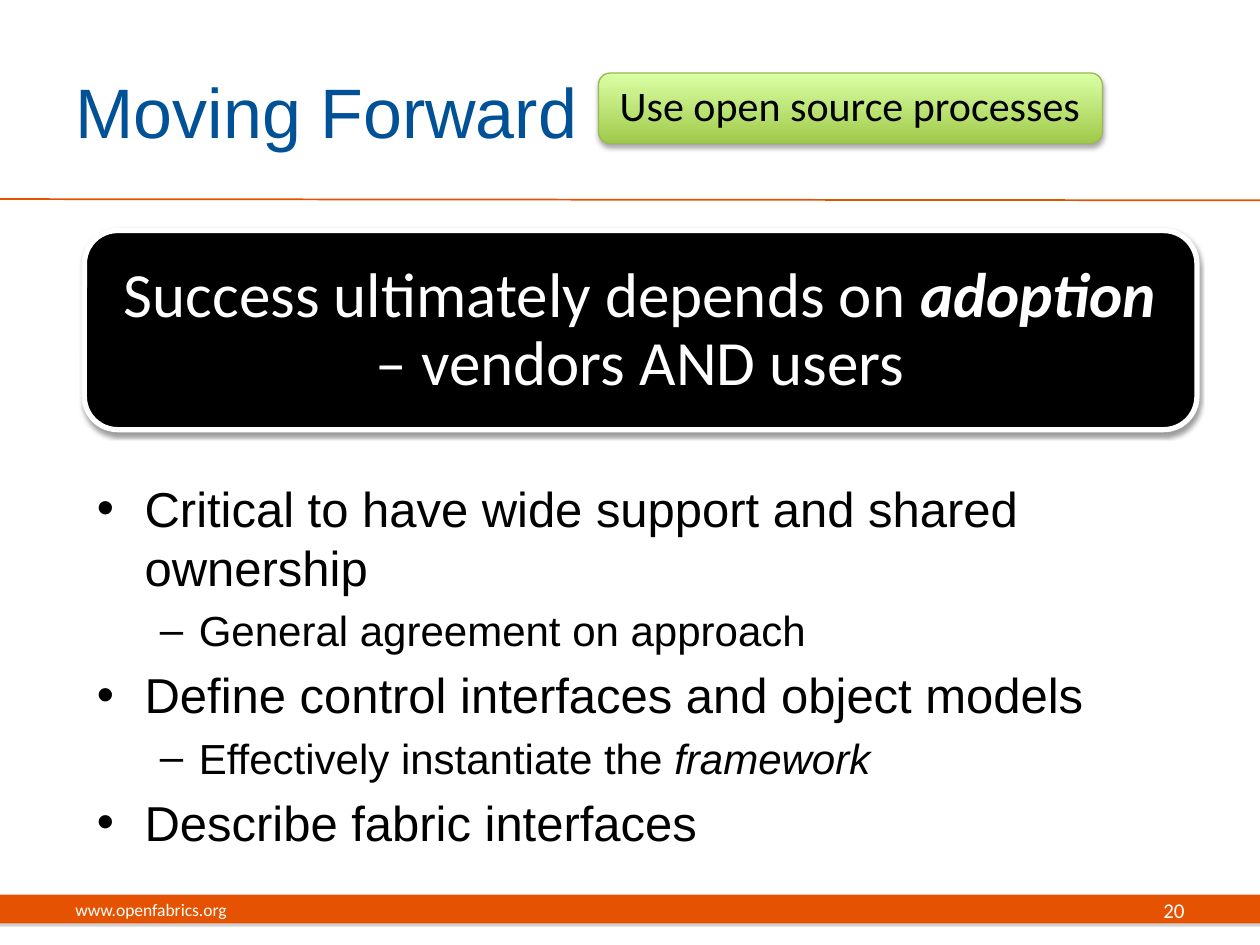
"""Build the Moving Forward slide."""
from lxml.etree import SubElement
from pptx import Presentation
from pptx.dml.color import RGBColor
from pptx.enum.shapes import MSO_CONNECTOR as Line, MSO_SHAPE as Shape
from pptx.enum.text import MSO_ANCHOR as Anchor, MSO_AUTO_SIZE as Fit, PP_ALIGN as Align
from pptx.oxml.ns import qn
from pptx.util import Inches, Pt

ORANGE, WHITE, BLACK = "E55302", "FFFFFF", "000000"
TITLE = [("Moving Forward", "")]
BULLETS = [
    (0, [("Critical to have wide support and shared ownership", "")]),
    (1, [("General agreement on approach", "")]),
    (0, [("Define control interfaces and object models", "")]),
    (1, [("Effectively instantiate the ", ""), ("framework", "i")]),
    (0, [("Describe fabric interfaces", "")]),
]
LEVELS = [("•", 0.38, -0.38, 28), ("–", 0.81, -0.31, 24)]
BANNER = [("Success ultimately depends on ", ""), ("adoption", "bi"),
          (" – vendors AND users", "")]
BADGE = [("Use open source processes", "")]
SITE = [("www.openfabrics.org", "")]
PAGE = [("20", "")]


def color(code):
    return RGBColor.from_string(code)


def write(para, runs, size=28, font="Arial", ink=BLACK, align=Align.LEFT,
          before=0, after=0, spacing=1.0):
    para.alignment, para.line_spacing = align, spacing
    para.space_before, para.space_after = Pt(before), Pt(after)
    for text, style in runs:
        run = para.add_run()
        run.text = text
        face = run.font
        face.name, face.size = font, Pt(size)
        face.bold, face.italic = "b" in style, "i" in style
        face.color.rgb = color(ink)


def frame(shape, anchor=Anchor.MIDDLE, inset=None):
    body = shape.text_frame
    body.word_wrap, body.auto_size = True, Fit.NONE
    body.vertical_anchor = anchor
    if inset is not None:
        body.margin_left = body.margin_right = Inches(inset)
        body.margin_top = body.margin_bottom = Inches(inset)
    return body


def label(slide, box, runs, inset=None, **style):
    shape = slide.shapes.add_textbox(*map(Inches, box))
    write(frame(shape, inset=inset).paragraphs[0], runs, **style)


def panel(slide, kind, box, fill, line=None, width=1, shadow=(BLACK, 35, 3.1, 1.8)):
    shape = slide.shapes.add_shape(kind, *map(Inches, box))
    if isinstance(fill, tuple):
        shape.fill.gradient()
        shape.fill.gradient_angle = 90
        for stop, code in zip(shape.fill.gradient_stops, fill):
            stop.color.rgb = color(code)
    else:
        shape.fill.solid()
        shape.fill.fore_color.rgb = color(fill)
    if line:
        shape.line.color.rgb, shape.line.width = color(line), Pt(width)
    else:
        shape.line.fill.background()
    shape.shadow.inherit = False
    shade, alpha, blur, dist = shadow
    effects = shape.element.spPr.find(qn("a:effectLst"))
    outer = SubElement(effects, qn("a:outerShdw"), blurRad=str(Pt(blur)),
                       dist=str(Pt(dist)), dir="5400000", rotWithShape="0")
    tint = SubElement(outer, qn("a:srgbClr"), val=shade)
    SubElement(tint, qn("a:alpha"), val=str(alpha * 1000))


def bullets(slide, box):
    body = frame(slide.shapes.add_textbox(*map(Inches, box)), Anchor.TOP)
    for row, (level, runs) in enumerate(BULLETS):
        mark, left, hang, size = LEVELS[level]
        para = body.add_paragraph() if row else body.paragraphs[0]
        para.level = level
        props = para._p.get_or_add_pPr()
        props.set("marL", str(Inches(left)))
        props.set("indent", str(Inches(hang)))
        SubElement(props, qn("a:buFont"), typeface="Arial")
        SubElement(props, qn("a:buChar"), char=mark)
        write(para, runs, size=size, before=0.2 * size if row else 0)


def main():
    deck = Presentation()
    deck.slide_width, deck.slide_height = Inches(10), Inches(7.5)
    slide = deck.slides.add_slide(deck.slide_layouts[5])

    panel(slide, Shape.RECTANGLE, (0, 7.1, 10, 0.23), ORANGE,
          shadow=("808080", 35, 0, 1.8))
    rule = slide.shapes.add_connector(
        Line.STRAIGHT, *map(Inches, (0, 1.58, 10, 1.59)))
    rule.line.color.rgb, rule.line.width = color(ORANGE), Pt(1)
    SubElement(rule._element.spPr, qn("a:effectLst"))

    title = slide.shapes.title
    title.left, title.top, title.width, title.height = map(
        Inches, (0.5, 0.25, 8.17, 1.25))
    write(frame(title).paragraphs[0], TITLE, size=40, ink="005195")
    bullets(slide, (0.67, 3.75, 9, 3.5))

    foot = dict(font="Calibri", ink=WHITE)
    label(slide, (0.5, 7.02, 3.17, 0.4), SITE, size=10, **foot)
    label(slide, (7.17, 7.02, 2.33, 0.4), PAGE, size=12, align=Align.RIGHT, **foot)

    callout = dict(font="Calibri", align=Align.CENTER, spacing=0.9)
    panel(slide, Shape.ROUNDED_RECTANGLE, (0.67, 1.83, 8.83, 1.58), BLACK,
          WHITE, 3, shadow=(BLACK, 38, 3.1, 1.6))
    label(slide, (0.74, 1.91, 8.68, 1.43), BANNER, inset=0.15, size=36,
          ink=WHITE, after=12.6, **callout)
    panel(slide, Shape.ROUNDED_RECTANGLE, (4.75, 0.58, 4, 0.56),
          ("A0CA4A", "DAFFA5"), "98B955", 0.75)
    label(slide, (4.79, 0.61, 3.91, 0.5), BADGE, inset=0.08, size=24,
          after=8.4, **callout)
    deck.save("out.pptx")


if __name__ == "__main__":
    main()
